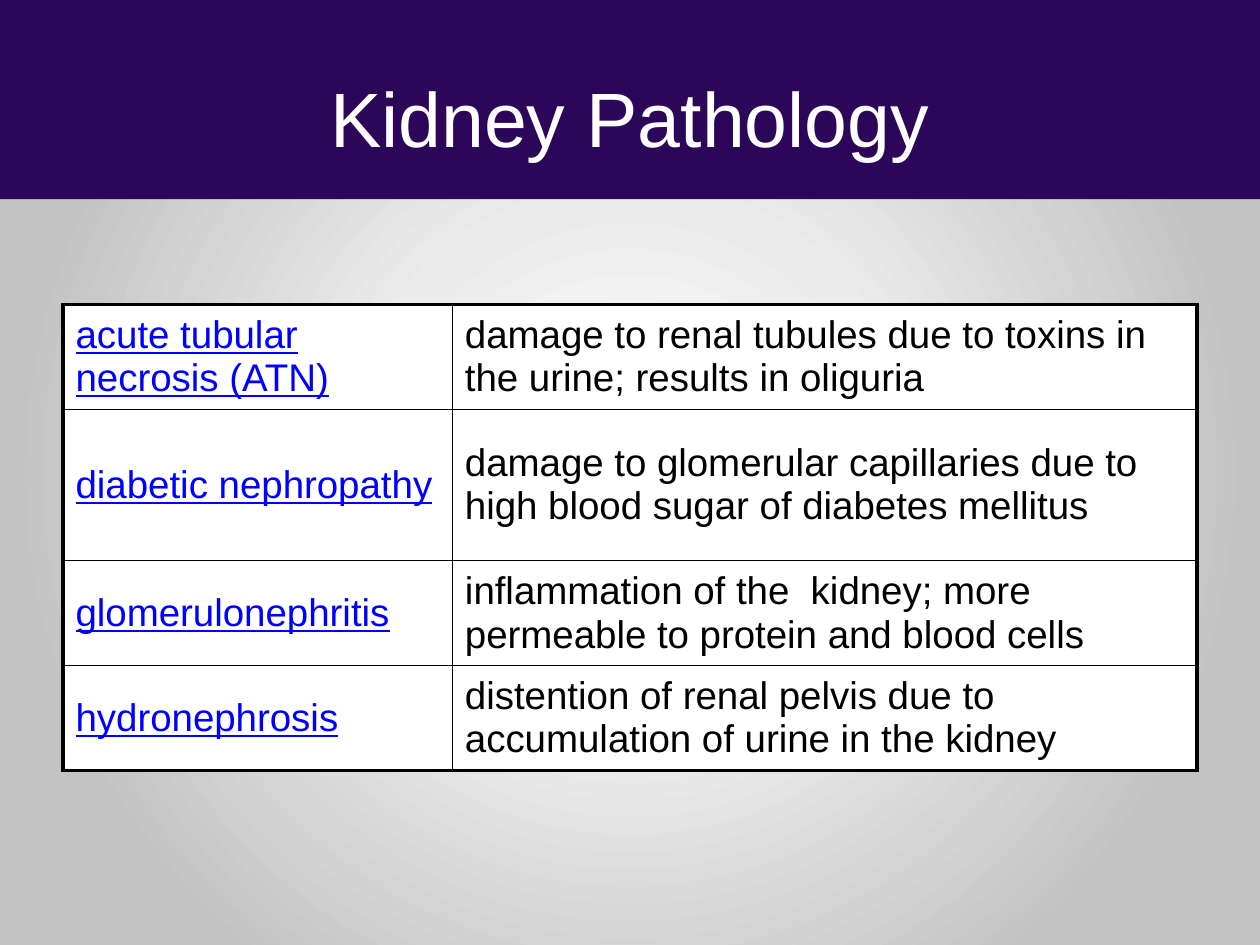
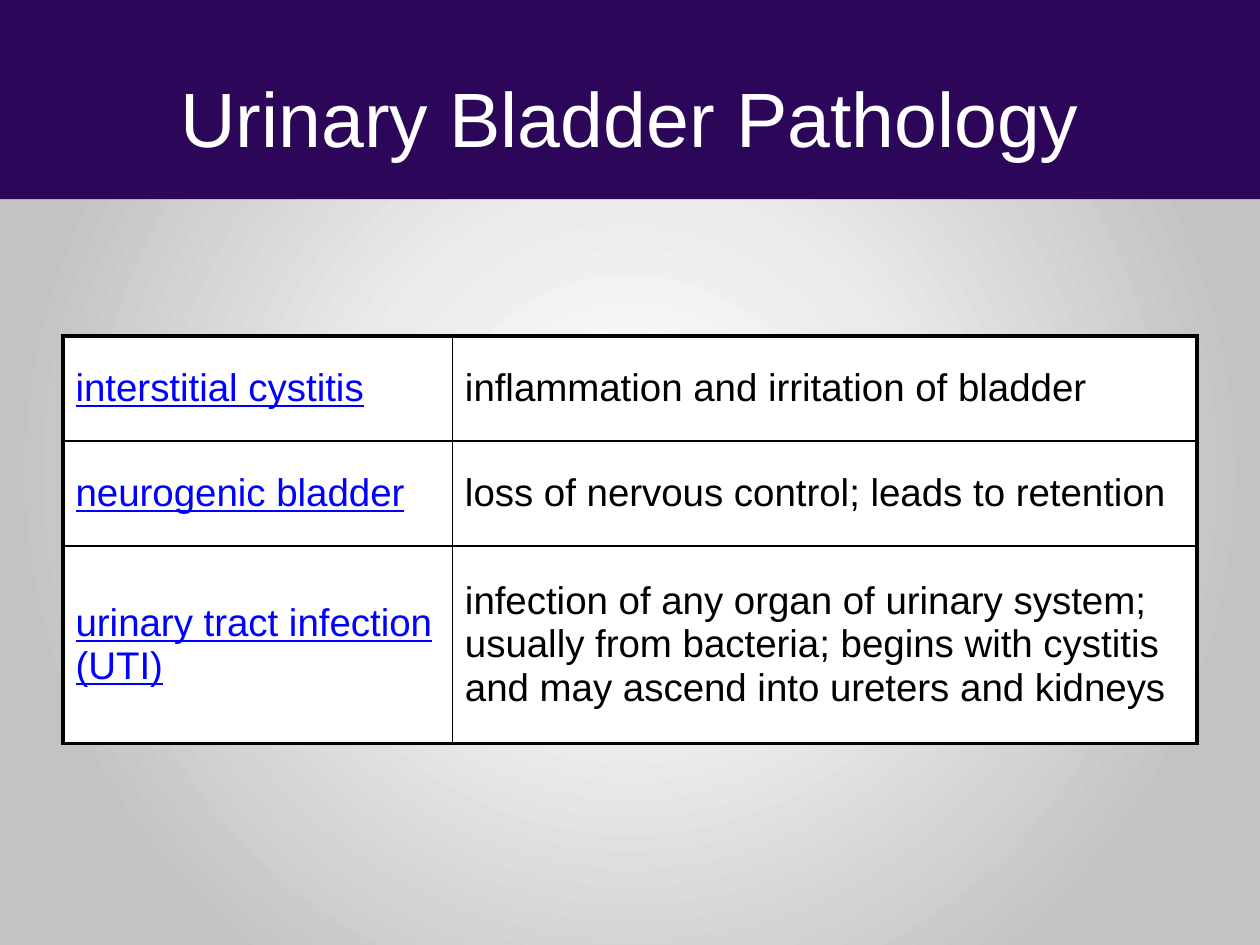
from dataclasses import dataclass

from lxml.etree import SubElement
from pptx import Presentation
from pptx.dml.color import RGBColor
from pptx.enum.shapes import MSO_SHAPE
from pptx.enum.text import MSO_ANCHOR, PP_ALIGN
from pptx.oxml.ns import qn
from pptx.util import Pt


@dataclass(frozen=True)
class Theme:
    band: str = "2C0659"
    title: str = "FFFFFF"
    term: str = "0000FF"
    meaning: str = "000000"
    border: str = "000000"
    cell: str = "FFFFFF"
    backdrop: tuple = ((2, "FFFFFF"), (35, "EBEBEB"), (79, "C3C3C3"))
    font: str = "Arial"
    title_size: float = 44
    body_size: float = 22
    outer_line: float = 2.25
    inner_line: float = 1


SLIDE_WIDTH, SLIDE_HEIGHT = 720, 540
MARGIN = 36
COLUMN_WIDTHS = (222.5, 425.5)

KIDNEY = [
    (60, "acute tubular necrosis (ATN)",
     "damage to renal tubules due to toxins in the urine; results in oliguria"),
    (86.4, "diabetic nephropathy",
     "damage to glomerular capillaries due to high blood sugar of diabetes mellitus"),
    (60, "glomerulonephritis",
     "inflammation of the  kidney; more permeable to protein and blood cells"),
    (60, "hydronephrosis",
     "distention of renal pelvis due to accumulation of urine in the kidney"),
]
BLADDER = [
    (60, "interstitial cystitis", "inflammation and irritation of bladder"),
    (60, "neurogenic bladder", "loss of nervous control; leads to retention"),
    (112.8, "urinary tract infection (UTI)",
     "infection of any organ of urinary system; usually from bacteria; "
     "begins with cystitis and may ascend into ureters and kidneys"),
]


def apply(target, values):
    for name, value in values.items():
        setattr(target, name, value)


class Deck:
    def __init__(self, theme):
        self.theme = theme
        self.prs = Presentation()
        apply(self.prs, {"slide_width": Pt(SLIDE_WIDTH), "slide_height": Pt(SLIDE_HEIGHT)})
        self.layout = self.prs.slide_layouts[5]
        self.slide = None
        self.backdrop()

    # Shared look
    def backdrop(self):
        master = self.prs.slide_master
        master.background.fill.gradient()
        gradient = next(master.background._cSld.iter(qn("a:gradFill")))
        for child in list(gradient):
            gradient.remove(child)
        stops = SubElement(gradient, qn("a:gsLst"))
        for percent, color in self.theme.backdrop:
            stop = SubElement(stops, qn("a:gs"), pos=str(percent * 1000))
            SubElement(stop, qn("a:srgbClr"), val=color)
        circle = SubElement(gradient, qn("a:path"), path="circle")
        SubElement(circle, qn("a:fillToRect"), dict.fromkeys("ltrb", "50000"))

    def band(self):
        """Draw the title band and place it on the layout, behind every title."""
        band = self.slide.shapes.add_shape(
            MSO_SHAPE.RECTANGLE, 0, 0, Pt(SLIDE_WIDTH), Pt(113.76))
        band.shadow.inherit = False
        band.fill.solid()
        band.fill.fore_color.rgb = RGBColor.from_string(self.theme.band)
        band.line.fill.background()
        self.layout.shapes._spTree.insert(2, band._element)

    # Slide parts
    def text(self, frame, words, size, color, align, underline=False):
        paragraph = frame.paragraphs[0]
        paragraph.alignment = align
        run = paragraph.add_run()
        run.text = words
        apply(run.font, {"name": self.theme.font, "size": Pt(size),
                         "bold": False, "underline": underline})
        run.font.color.rgb = RGBColor.from_string(color)

    def new_slide(self, heading):
        first = self.slide is None
        self.slide = self.prs.slides.add_slide(self.layout)
        if first:
            self.band()
        title = self.slide.shapes.title
        apply(title, {"left": Pt(MARGIN), "top": Pt(21.6),
                      "width": Pt(SLIDE_WIDTH - 2 * MARGIN), "height": Pt(90)})
        apply(title.text_frame, {"word_wrap": True, "vertical_anchor": MSO_ANCHOR.MIDDLE})
        self.text(title.text_frame, heading, self.theme.title_size,
                  self.theme.title, PP_ALIGN.CENTER)

    def borders(self, cell, outer):
        """Draw the four cell edges; outer tells which lie on the table's rim."""
        properties = cell._tc.get_or_add_tcPr()
        for side in "LRTB":
            width = self.theme.outer_line if outer[side] else self.theme.inner_line
            edge = SubElement(properties, qn(f"a:ln{side}"), w=str(Pt(width)))
            fill = SubElement(edge, qn("a:solidFill"))
            SubElement(fill, qn("a:srgbClr"), val=self.theme.border)

    def glossary(self, top, entries):
        heights = [height for height, _, _ in entries]
        table = self.slide.shapes.add_table(
            len(entries), len(COLUMN_WIDTHS), Pt(MARGIN), Pt(top),
            Pt(sum(COLUMN_WIDTHS)), Pt(sum(heights))).table
        apply(table, {"first_row": False, "horz_banding": False})
        for column, width in zip(table.columns, COLUMN_WIDTHS):
            column.width = Pt(width)
        for r, (height, *words) in enumerate(entries):
            table.rows[r].height = Pt(height)
            for c, content in enumerate(words):
                cell = table.cell(r, c)
                is_term = c == 0
                self.borders(cell, {"L": is_term, "R": not is_term,
                                    "T": r == 0, "B": r == len(entries) - 1})
                cell.fill.solid()
                cell.fill.fore_color.rgb = RGBColor.from_string(self.theme.cell)
                cell.vertical_anchor = MSO_ANCHOR.MIDDLE
                color = self.theme.term if is_term else self.theme.meaning
                self.text(cell.text_frame, content, self.theme.body_size,
                          color, PP_ALIGN.LEFT, underline=is_term)


def main():
    deck = Deck(Theme())
    for heading, top, entries in (("Kidney Pathology", 174, KIDNEY),
                                  ("Urinary Bladder Pathology", 192, BLADDER)):
        deck.new_slide(heading)
        deck.glossary(top, entries)
    deck.prs.save("out.pptx")


if __name__ == "__main__":
    main()
